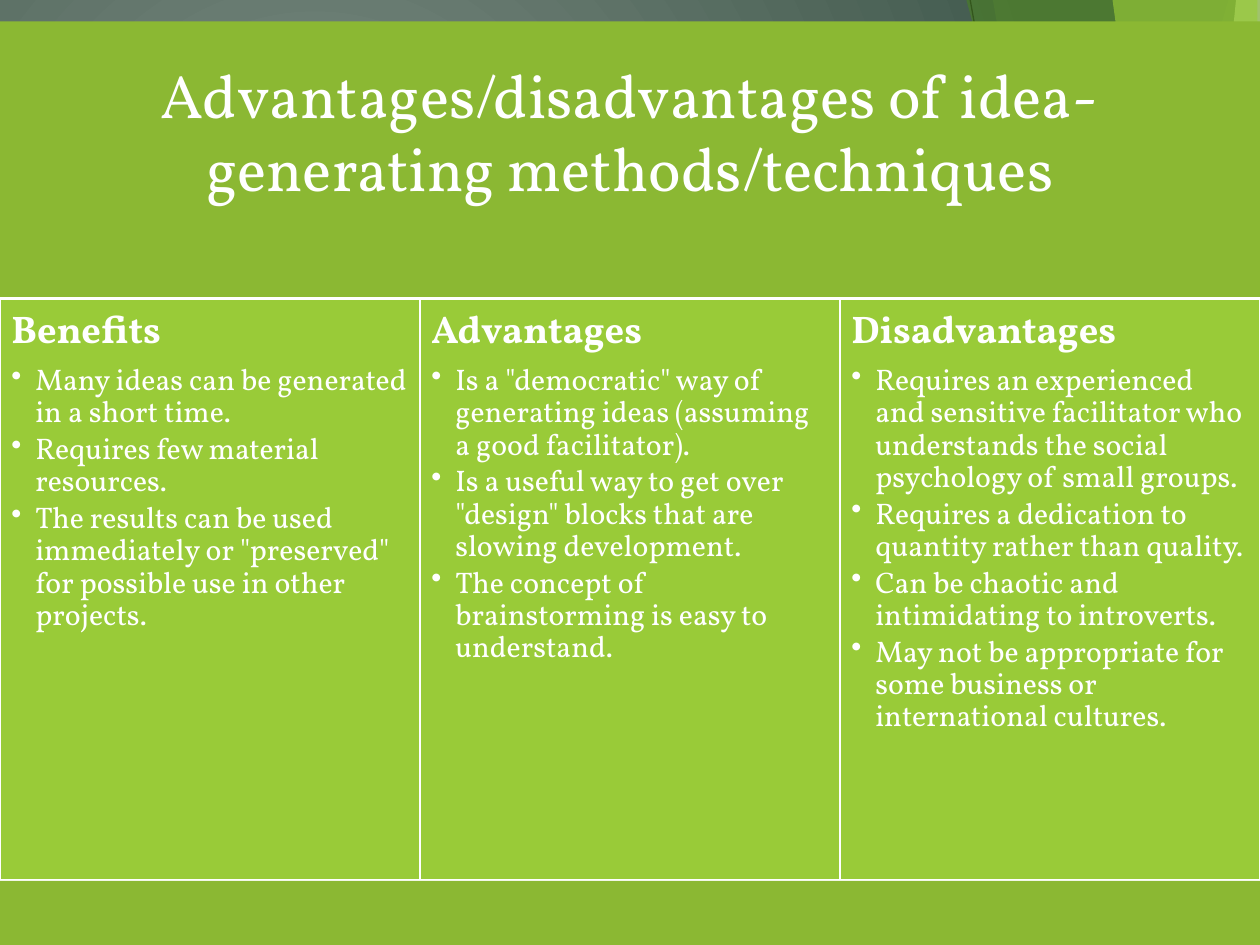
from dataclasses import dataclass

from lxml.etree import SubElement
from pptx import Presentation
from pptx.dml.color import RGBColor
from pptx.enum.shapes import MSO_CONNECTOR, MSO_SHAPE
from pptx.enum.text import MSO_ANCHOR, MSO_AUTO_SIZE, PP_ALIGN
from pptx.oxml.ns import qn
from pptx.shapes.autoshape import Shape
from pptx.slide import Slide
from pptx.text.text import _Paragraph
from pptx.util import Inches, Pt

WIDTH, HEIGHT = Inches(10), Inches(7.5)
FONT = "Vollkorn"
WHITE = RGBColor(0xFF, 0xFF, 0xFF)
BLACK = RGBColor(0x00, 0x00, 0x00)
SLATE = RGBColor(0x79, 0x89, 0x80)
DARK_SLATE = RGBColor(0x40, 0x59, 0x4C)
LIME = RGBColor(0x99, 0xCB, 0x38)
PALE_LIME = RGBColor(0xC2, 0xE0, 0x88)
BAND_GREEN = RGBColor(0x8B, 0xB8, 0x33)
LEAF = RGBColor(0x63, 0xA5, 0x37)
FOREST = RGBColor(0x4A, 0x7C, 0x29)

BAND_TOP, PANEL_TOP, FOOTER_TOP = 2.27, 31.6, 93.2

Point = tuple[float, float]


@dataclass(frozen=True)
class Facet:
    color: RGBColor
    opacity: int
    corners: tuple[Point, ...]


@dataclass(frozen=True)
class Panel:
    heading: str
    points: tuple[str, ...]


RAYS: list[tuple[Point, Point]] = [
    ((56.1, 100), (100, 61)),
    ((77, 0), (90.4, 100)),
]
FACETS = [
    Facet(LIME, 85, ((0, 58.5), (4.9, 100), (0, 100))),
    Facet(LIME, 30, ((97.5, 0), (75.4, 100), (100, 100), (100, 0))),
    Facet(LIME, 20, ((78.8, 0), (91.9, 100), (100, 100), (100, 0))),
    Facet(LEAF, 72, ((72.6, 100), (100, 57.2), (100, 100))),
    Facet(FOREST, 70, ((76.7, 0), (97, 100), (100, 100), (100, 0))),
    Facet(PALE_LIME, 70, ((98.1, 0), (90.7, 100), (100, 100), (100, 0))),
    Facet(LIME, 65, ((88.3, 0), (98.6, 100), (100, 100), (99.8, 0))),
    Facet(LIME, 80, ((88.1, 100), (100, 71.3), (100, 100))),
]
PANELS = [
    Panel("Benefits", (
        "Many ideas can be generated in a short time.",
        "Requires few material resources.",
        'The results can be used immediately or "preserved" for possible use in other projects.',
    )),
    Panel("Advantages", (
        'Is a "democratic" way of generating ideas (assuming a good facilitator).',
        'Is a useful way to get over "design" blocks that are slowing development.',
        "The concept of brainstorming is easy to understand.",
    )),
    Panel("Disadvantages", (
        "Requires an experienced and sensitive facilitator who understands the social "
        "psychology of small groups.",
        "Requires a dedication to quantity rather than quality.",
        "Can be chaotic and intimidating to introverts.",
        "May not be appropriate for some business or international cultures.",
    )),
]


def across(percent: float) -> int:
    return round(WIDTH * percent / 100)


def down(percent: float) -> int:
    return round(HEIGHT * percent / 100)


def paint(shape: Shape, color: RGBColor) -> None:
    shape.fill.solid()
    shape.fill.fore_color.rgb = color
    shape.line.fill.background()


def set_background(slide: Slide) -> None:
    fill = slide.background.fill
    fill.gradient()
    for stop, color in zip(fill.gradient_stops, (SLATE, DARK_SLATE)):
        stop.color.rgb = color
    gradient = slide._element.xpath(".//p:bg//a:gradFill")[0]
    for linear in gradient.findall(qn("a:lin")):
        gradient.remove(linear)
    circle = SubElement(gradient, qn("a:path"), {"path": "circle"})
    SubElement(circle, qn("a:fillToRect"),
               {"l": "50000", "t": "50000", "r": "100000", "b": "100000"})


def add_ray(slide: Slide, start: Point, end: Point) -> None:
    ray = slide.shapes.add_connector(
        MSO_CONNECTOR.STRAIGHT,
        across(start[0]), down(start[1]), across(end[0]), down(end[1]))
    ray.line.color.rgb = BLACK
    ray.line.width = Pt(0.75)
    SubElement(ray._element.spPr, qn("a:effectLst"))


def add_facet(slide: Slide, facet: Facet) -> None:
    first, *others = [(across(x), down(y)) for x, y in facet.corners]
    outline = slide.shapes.build_freeform(*first)
    outline.add_line_segments(others, close=True)
    shape = outline.convert_to_shape()
    shape.shadow.inherit = False
    paint(shape, facet.color)
    tint = shape._element.spPr.find(qn("a:solidFill"))[0]
    SubElement(tint, qn("a:alpha"), {"val": str(facet.opacity * 1000)})


def add_block(slide: Slide, left: float, top: float, width: float,
              height: float, color: RGBColor) -> Shape:
    block = slide.shapes.add_shape(
        MSO_SHAPE.RECTANGLE, across(left), down(top), across(width), down(height))
    block.shadow.inherit = False
    paint(block, color)
    return block


def style(paragraph: _Paragraph, size: float, bold: bool = False) -> None:
    for run in paragraph.runs:
        run.font.name = FONT
        run.font.size = Pt(size)
        run.font.bold = bold
        run.font.color.rgb = WHITE


def make_bullet(paragraph: _Paragraph) -> None:
    paragraph.level = 1
    properties = paragraph._p.get_or_add_pPr()
    properties.set("marL", str(Inches(0.19)))
    properties.set("indent", str(-Inches(0.19)))
    SubElement(properties, qn("a:buChar"), {"char": "•"})


def place_title(slide: Slide) -> None:
    title = slide.shapes.title
    title.left, title.top = 0, down(BAND_TOP)
    title.width, title.height = WIDTH, down(PANEL_TOP - BAND_TOP)
    paint(title, BAND_GREEN)
    frame = title.text_frame
    frame.text = "Advantages/disadvantages of idea-generating methods/techniques"
    frame.word_wrap = True
    frame.auto_size = MSO_AUTO_SIZE.NONE
    frame.vertical_anchor = MSO_ANCHOR.MIDDLE
    frame.margin_left = frame.margin_right = frame.margin_top = Inches(0.15)
    frame.margin_bottom = Inches(0.62)
    heading = frame.paragraphs[0]
    heading.alignment = PP_ALIGN.CENTER
    style(heading, 35)
    slide.shapes._spTree.append(title._element)


def add_panel(slide: Slide, column: int, panel: Panel) -> None:
    width = 100 / len(PANELS)
    block = add_block(slide, column * width, PANEL_TOP, width,
                      FOOTER_TOP - PANEL_TOP, LIME)
    block.line.color.rgb = WHITE
    block.line.width = Pt(1.5)
    frame = block.text_frame
    frame.word_wrap = True
    frame.vertical_anchor = MSO_ANCHOR.TOP
    frame.margin_left = frame.margin_right = Inches(0.09)
    frame.margin_top = frame.margin_bottom = Inches(0.09)
    frame.text = "\n".join((panel.heading, *panel.points))
    for index, paragraph in enumerate(frame.paragraphs):
        is_heading = index == 0
        paragraph.alignment = PP_ALIGN.LEFT
        paragraph.line_spacing = 0.9
        paragraph.space_after = Pt(7.7 if is_heading else 2.7)
        style(paragraph, 22 if is_heading else 17, bold=is_heading)
        if not is_heading:
            make_bullet(paragraph)


def main() -> None:
    deck = Presentation()
    deck.slide_width, deck.slide_height = WIDTH, HEIGHT
    slide = deck.slides.add_slide(deck.slide_layouts[5])
    set_background(slide)
    for start, end in RAYS:
        add_ray(slide, start, end)
    for facet in FACETS:
        add_facet(slide, facet)
    place_title(slide)
    for column, panel in enumerate(PANELS):
        add_panel(slide, column, panel)
    add_block(slide, 0, FOOTER_TOP, 100, 100 - FOOTER_TOP, BAND_GREEN)
    deck.save("out.pptx")


if __name__ == "__main__":
    main()
